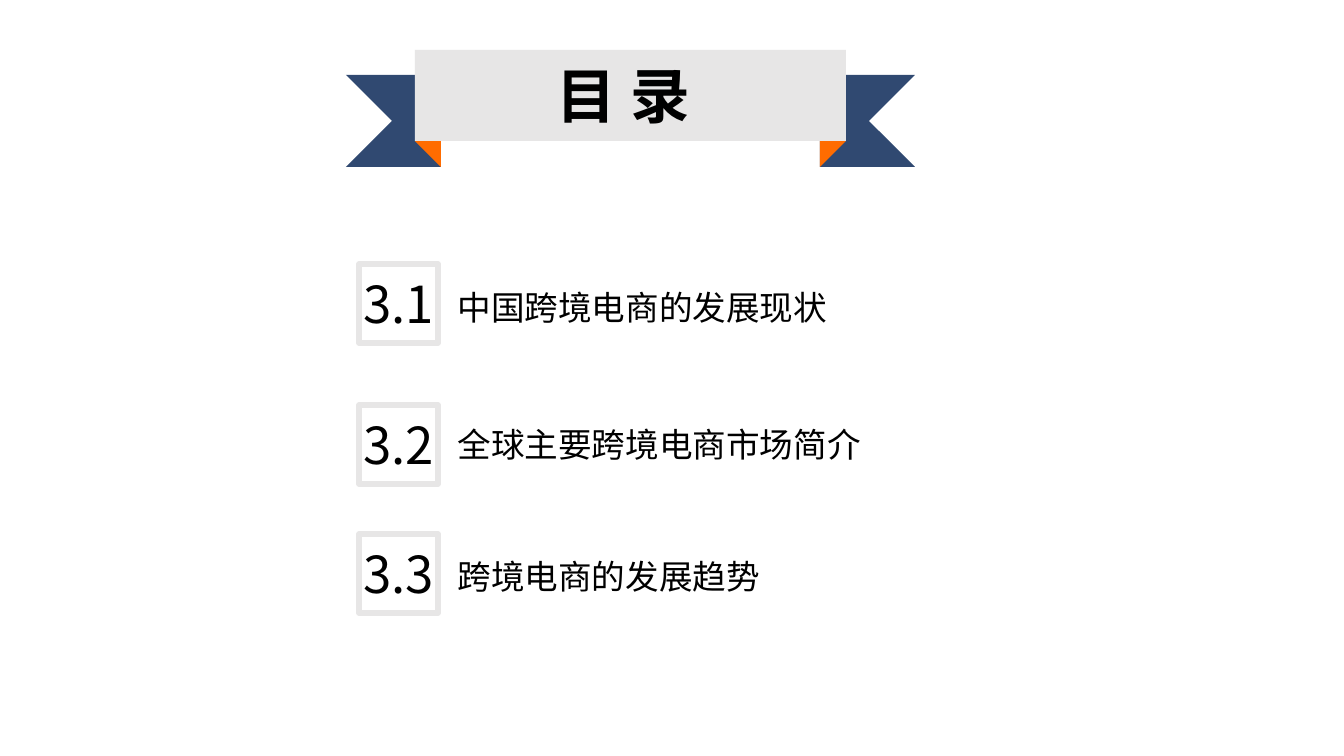
from dataclasses import dataclass

from lxml.etree import SubElement
from pptx import Presentation
from pptx.dml.color import RGBColor
from pptx.enum.shapes import MSO_SHAPE
from pptx.enum.text import MSO_AUTO_SIZE, PP_ALIGN
from pptx.oxml.ns import qn
from pptx.util import Pt

EMU_PER_PX = 914400 / 134.4


@dataclass(frozen=True)
class Theme:
    """Colours, type sizes and font of the deck."""
    navy: RGBColor = RGBColor(0x30, 0x49, 0x71)
    orange: RGBColor = RGBColor(0xFF, 0x6C, 0x00)
    grey: RGBColor = RGBColor(0xE7, 0xE6, 0xE6)
    ink: RGBColor = RGBColor(0, 0, 0)
    font: str = "Noto Sans CJK SC"
    title_size: float = 32
    number_size: float = 27.3
    label_size: float = 18
    frame_line: float = 3


THEME = Theme()
BANNER = (415, 50, 431, 91)
RIBBON_TAIL = [(346, 75), (441, 75), (441, 167), (346, 167), (392, 121)]
FOLD = 26
FRAME_LEFT, FRAME_SIZE = 359, 79
LABEL_LEFT = 441
CHAPTERS = [
    ("3.1", " 中国跨境电商的发展现状", 264, 282, 456),
    ("3.2", " 全球主要跨境电商市场简介", 405, 419, 488),
    ("3.3", " 跨境电商的发展趋势", 534, 551, 339),
]


def px(length):
    """Turn px into EMU."""
    return round(length * EMU_PER_PX)


def set_values(target, values):
    """Set attributes of an object from a dict."""
    for name, value in values.items():
        setattr(target, name, value)


def paint(shape, fill=None, line=None):
    """Give a shape its fill and line, without a shadow."""
    shape.shadow.inherit = False
    if fill is None:
        shape.fill.background()
    else:
        shape.fill.solid()
        shape.fill.fore_color.rgb = fill
    if line is None:
        shape.line.fill.background()
    else:
        shape.line.color.rgb = line
        shape.line.width = Pt(THEME.frame_line)


def add_preset(page, kind, place, rotation=0, **colours):
    """Add a painted preset shape."""
    shape = page.shapes.add_shape(kind, *map(px, place))
    shape.rotation = rotation
    paint(shape, **colours)


def add_outline(page, points, fill):
    """Add a closed polygon."""
    builder = page.shapes.build_freeform(*points[0], scale=EMU_PER_PX)
    builder.add_line_segments(points[1:], close=True)
    paint(builder.convert_to_shape(), fill)


def add_text(page, text, place, size, align=PP_ALIGN.LEFT, bold=False, wrap=True, insets=(9, 5)):
    """Add a one-line text box."""
    box = page.shapes.add_textbox(*map(px, place))
    side, end = map(px, insets)
    set_values(box.text_frame, {
        "word_wrap": wrap, "auto_size": MSO_AUTO_SIZE.SHAPE_TO_FIT_TEXT,
        "margin_left": side, "margin_right": side,
        "margin_top": end, "margin_bottom": end,
    })
    para = box.text_frame.paragraphs[0]
    para.alignment = align
    span = para.add_run()
    span.text = text
    span.font.color.rgb = THEME.ink
    set_values(span.font, {"name": THEME.font, "size": Pt(size), "bold": bold})
    SubElement(span.font._element, qn("a:ea"), typeface=THEME.font)


def add_banner(page):
    """Add the title ribbon with mirrored tails and folds."""
    left, top, width, height = BANNER
    right, bottom = left + width, top + height
    mirrored = [(left + right - x, y) for x, y in RIBBON_TAIL]
    folds = [(left, 180), (right - FOLD, 90)]
    for points, (fold_left, rotation) in zip((RIBBON_TAIL, mirrored), folds):
        add_outline(page, points, THEME.navy)
        add_preset(page, MSO_SHAPE.RIGHT_TRIANGLE, (fold_left, bottom, FOLD, FOLD),
                   rotation, fill=THEME.orange)
    add_preset(page, MSO_SHAPE.RECTANGLE, BANNER, fill=THEME.grey)
    add_text(page, "目 录", (449, 52, 349, 86), THEME.title_size,
             PP_ALIGN.CENTER, bold=True, insets=(13, 7))


def add_chapter(page, number, label, frame_top, label_top, label_width):
    """Add a framed chapter number and its label."""
    add_preset(page, MSO_SHAPE.RECTANGLE,
               (FRAME_LEFT, frame_top, FRAME_SIZE, FRAME_SIZE), line=THEME.grey)
    add_text(page, number, (FRAME_LEFT - 9, frame_top + 4, 97, 71),
             THEME.number_size, PP_ALIGN.CENTER, wrap=False)
    add_text(page, label, (LABEL_LEFT, label_top, label_width, 51), THEME.label_size)


def main():
    """Build and save the contents slide."""
    deck = Presentation()
    set_values(deck, {"slide_width": px(1344), "slide_height": px(756)})
    page = deck.slides.add_slide(deck.slide_layouts[6])
    add_banner(page)
    for chapter in CHAPTERS:
        add_chapter(page, *chapter)
    deck.save("out.pptx")


if __name__ == "__main__":
    main()
